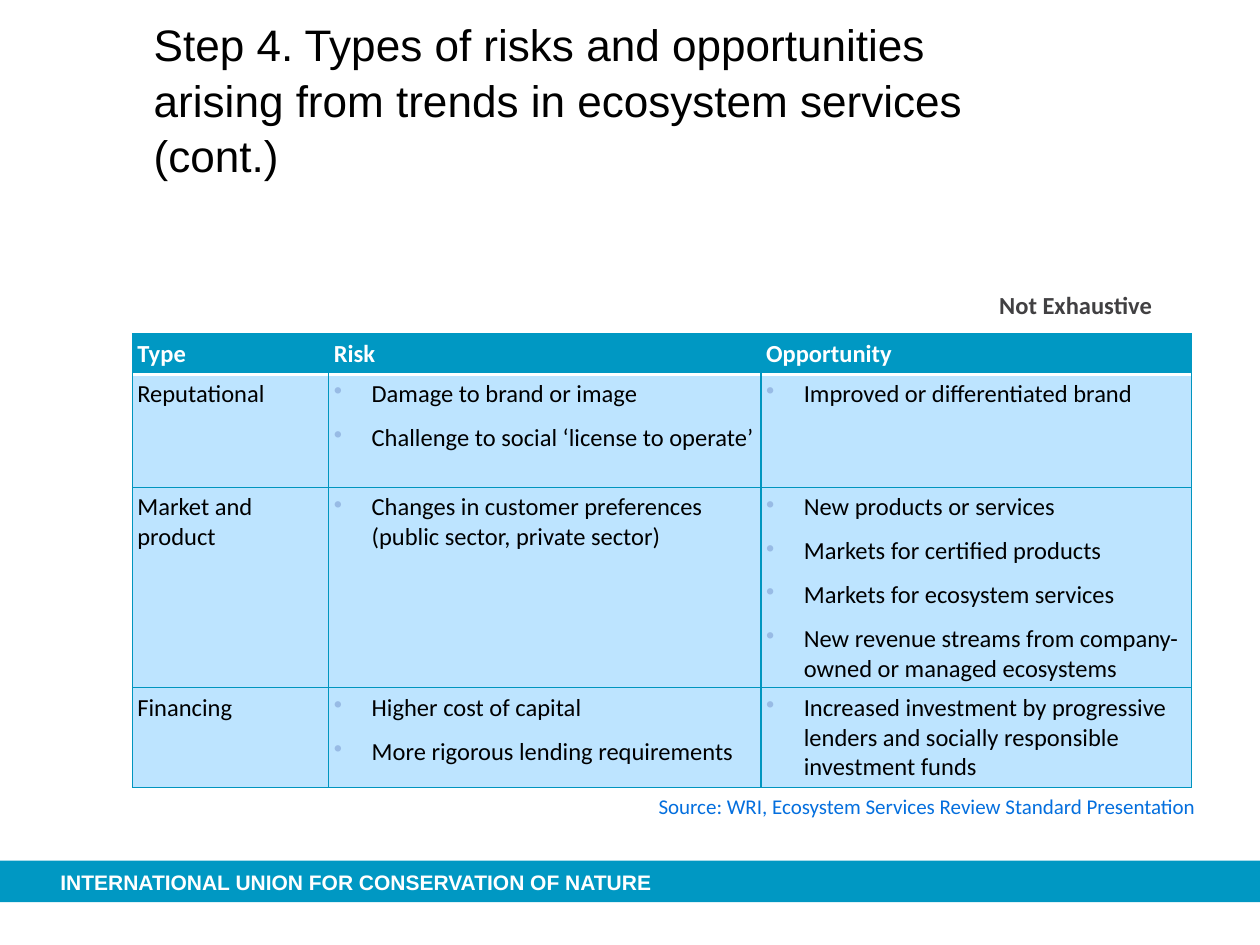
"""Build the slide on risks and opportunities from ecosystem service trends."""
from lxml import etree
from pptx import Presentation
from pptx.dml.color import RGBColor
from pptx.enum.shapes import MSO_SHAPE
from pptx.enum.text import MSO_ANCHOR, PP_ALIGN
from pptx.oxml.ns import qn
from pptx.util import Inches, Pt

RECT = MSO_SHAPE.RECTANGLE
TOP, MIDDLE = MSO_ANCHOR.TOP, MSO_ANCHOR.MIDDLE
LEFT, RIGHT = PP_ALIGN.LEFT, PP_ALIGN.RIGHT
WHITE = RGBColor(0xFF, 0xFF, 0xFF)
BLACK = RGBColor(0, 0, 0)
GREY = RGBColor(0x41, 0x40, 0x42)
TEAL = RGBColor(0x00, 0x98, 0xC3)
EDGE = RGBColor(0x00, 0x95, 0xBF)
PALE = RGBColor(0xBD, 0xE4, 0xFF)
DOT = RGBColor(0x98, 0xBB, 0xE5)
BLUE = RGBColor(0x04, 0x6F, 0xDE)


def write(frame, lines, size=14, name="Calibri", color=BLACK, bold=False,
          align=LEFT, gap=0, pitch=None, bullet=False):
    for i, line in enumerate(lines):
        para = frame.paragraphs[0] if i == 0 else frame.add_paragraph()
        if bullet:
            props = para._p.get_or_add_pPr()
            props.set("marL", str(Inches(0.3)))
            props.set("indent", str(-Inches(0.3)))
            tint = etree.SubElement(props, qn("a:buClr"))
            etree.SubElement(tint, qn("a:srgbClr"), val=str(DOT))
            etree.SubElement(props, qn("a:buChar"), char="•")
        para.alignment = align
        para.space_before = Pt(gap if i else 0)
        para.space_after = Pt(gap)
        if pitch:
            para.line_spacing = pitch
        run = para.add_run()
        run.text = line
        font = run.font
        font.size, font.name, font.bold = Pt(size), name, bold
        font.color.rgb = color


def edge(cell, side, color, width):
    line = etree.SubElement(cell._tc.get_or_add_tcPr(), qn("a:" + side),
                            w=str(Pt(width)))
    fill = etree.SubElement(line, qn("a:solidFill"))
    etree.SubElement(fill, qn("a:srgbClr"), val=str(color))


deck = Presentation()
deck.slide_width, deck.slide_height = Inches(10), Inches(7.5)
slide = deck.slides.add_slide(deck.slide_layouts[6])
shapes = slide.shapes

band = shapes.add_shape(RECT, 0, Inches(6.83), Inches(10), Inches(0.33))
band.shadow.inherit = False
band.fill.solid()
band.fill.fore_color.rgb = TEAL
band.line.fill.background()

labels = [
    ("INTERNATIONAL UNION FOR CONSERVATION OF NATURE", (0.48, 6.9, 5.6, 0.2),
     MIDDLE, dict(size=12, name="Arial", color=WHITE, bold=True)),
    ("Step 4. Types of risks and opportunities arising from trends in "
     "ecosystem services (cont.)", (1.22, 0.12, 6.77, 0.87),
     TOP, dict(size=25.2, name="Arial", pitch=1.05)),
    ("Source: WRI, Ecosystem Services Review Standard Presentation",
     (1.06, 6.3, 8.43, 0.2), TOP, dict(size=12, color=BLUE, align=RIGHT)),
    ("Not Exhaustive", (7.93, 2.3, 1.41, 0.24),
     TOP, dict(color=GREY, bold=True)),
]
for text, place, anchor, style in labels:
    box = shapes.add_textbox(*map(Inches, place))
    frame = box.text_frame
    frame.margin_left = frame.margin_right = 0
    frame.margin_top = frame.margin_bottom = 0
    frame.word_wrap = True
    frame.vertical_anchor = anchor
    write(frame, [text], **style)

rows = [
    [["Type"], ["Risk"], ["Opportunity"]],
    [["Reputational"],
     ["Damage to brand or image", "Challenge to social ‘license to operate’"],
     ["Improved or differentiated brand"]],
    [["Market and product"],
     ["Changes in customer preferences (public sector, private sector)"],
     ["New products or services", "Markets for certified products",
      "Markets for ecosystem services",
      "New revenue streams from company-owned or managed ecosystems"]],
    [["Financing"],
     ["Higher cost of capital", "More rigorous lending requirements"],
     ["Increased investment by progressive lenders and socially responsible "
      "investment funds"]],
]
widths = [1.56, 3.43, 3.42]
heights = [0.32, 0.9, 1.59, 0.79]
table = shapes.add_table(len(rows), len(widths), Inches(1.05), Inches(2.65),
                         Inches(sum(widths)), Inches(sum(heights))).table
for col, width in zip(table.columns, widths):
    col.width = Inches(width)
for row, height in zip(table.rows, heights):
    row.height = Inches(height)

for r, row in enumerate(rows):
    head = r == 0
    for c, lines in enumerate(row):
        cell = table.cell(r, c)
        cell.margin_left = cell.margin_right = Inches(0.04)
        cell.margin_top = cell.margin_bottom = Inches(0.04)
        cell.vertical_anchor = MIDDLE if head else TOP
        for side in ("lnL", "lnR", "lnT", "lnB"):
            if head and side == "lnB" or r == 1 and side == "lnT":
                edge(cell, side, WHITE, 2)
            else:
                edge(cell, side, TEAL if head else EDGE, 0.75)
        cell.fill.solid()
        cell.fill.fore_color.rgb = TEAL if head else PALE
        write(cell.text_frame, lines, color=WHITE if head else BLACK,
              bold=head, gap=4, bullet=not head and c > 0)

deck.save("out.pptx")
